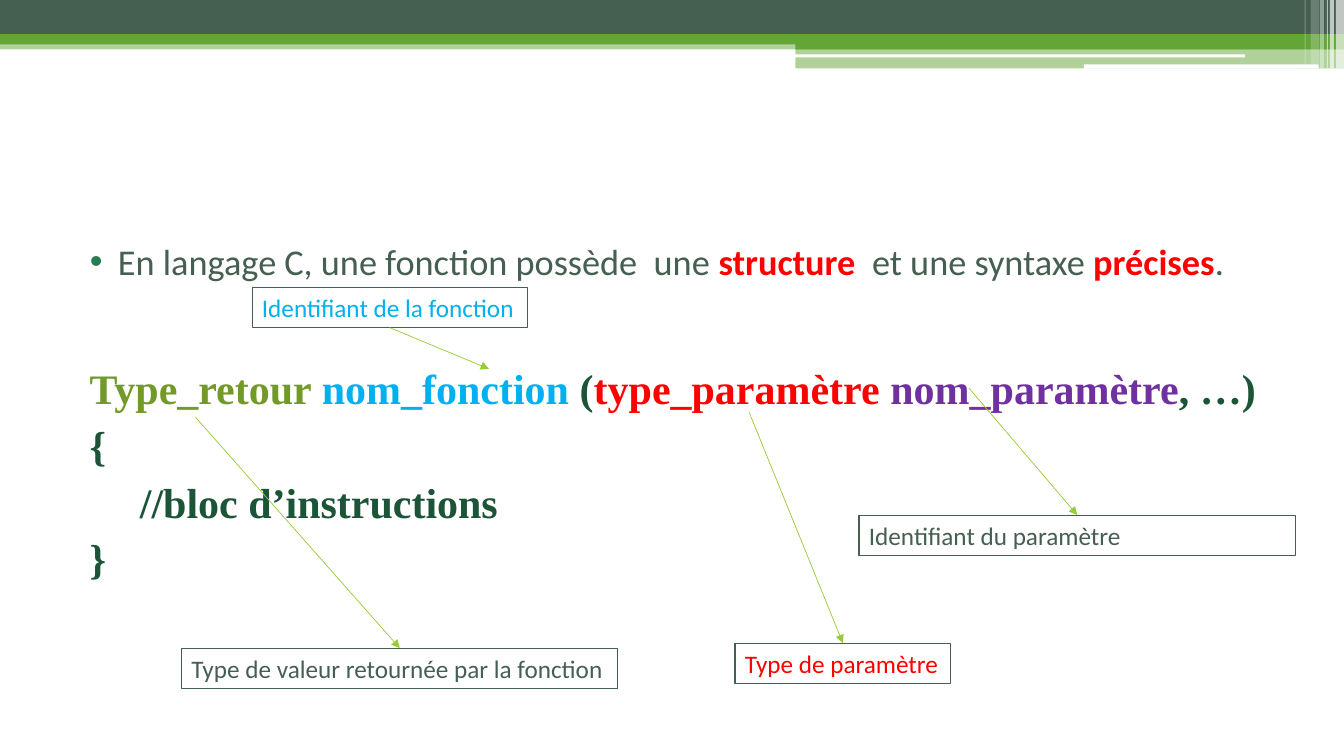
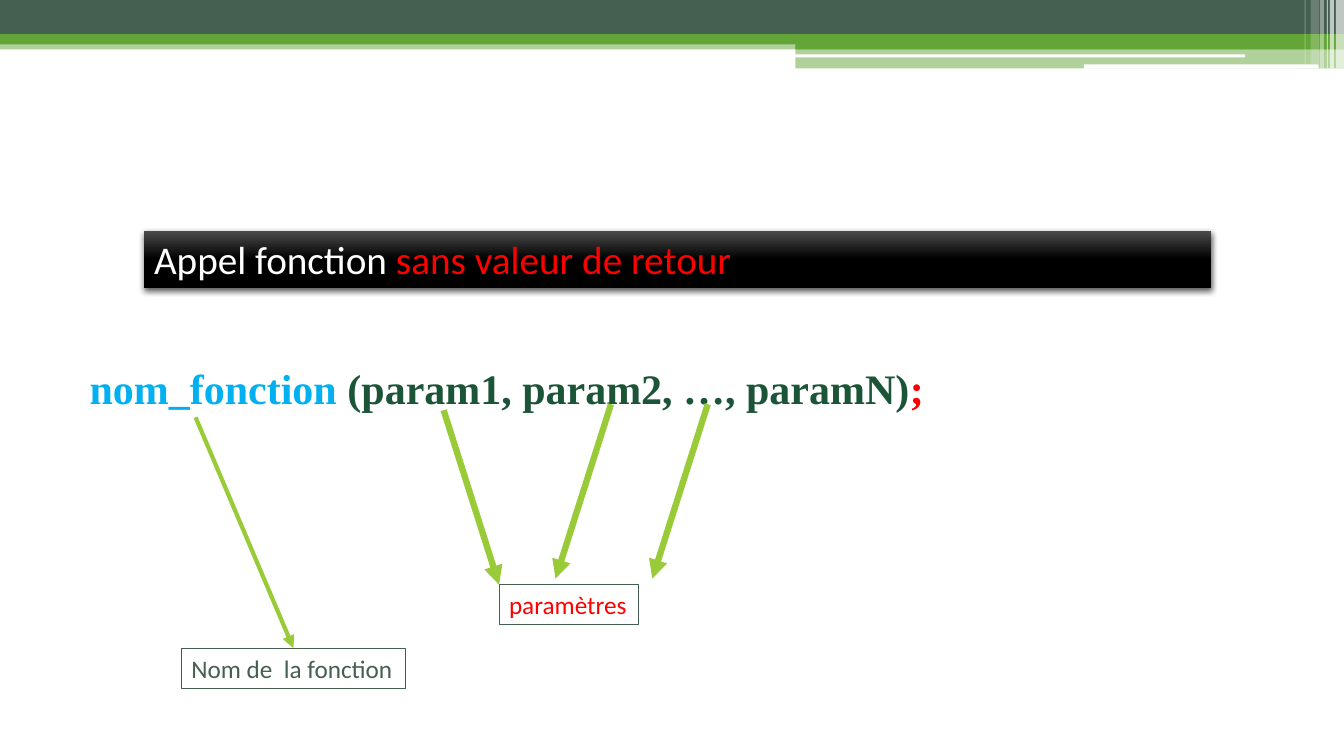
"""Build two slides on the structure and the call of a C function."""
from dataclasses import dataclass

from lxml import etree
from pptx import Presentation
from pptx.dml.color import RGBColor
from pptx.enum.shapes import MSO_CONNECTOR, MSO_SHAPE
from pptx.enum.text import MSO_ANCHOR, MSO_AUTO_SIZE, PP_ALIGN
from pptx.oxml.ns import qn
from pptx.util import Inches, Pt

RECTANGLE, ROUNDED = MSO_SHAPE.RECTANGLE, MSO_SHAPE.ROUNDED_RECTANGLE
STRAIGHT = MSO_CONNECTOR.STRAIGHT
TOP, NO_AUTOFIT = MSO_ANCHOR.TOP, MSO_AUTO_SIZE.NONE
LEFT, JUSTIFY = PP_ALIGN.LEFT, PP_ALIGN.JUSTIFY

SLATE, GREEN, LIME, WHITE, BLACK = "455F51", "63A537", "99CB38", "FFFFFF", "000000"
RED, BLUE, PURPLE, OLIVE, FOREST = "FF0000", "00B0F0", "7030A0", "739A28", "1C5438"
BULLET, CHARCOAL = "297D53", "4B4B4B"
SANS, SERIF = "Calibri", "Times New Roman"
TOP_SIDE, BOTTOM_SIDE = 0, 2


@dataclass(frozen=True)
class Band:
    """A strip of the header, with its opacity in percent."""
    left: float
    top: float
    width: float
    height: float
    color: str
    opacity: int = 100
    rounded: bool = False


@dataclass(frozen=True)
class Span:
    """A stretch of text in one colour."""
    text: str
    color: str
    bold: bool = False


@dataclass(frozen=True)
class Label:
    """A framed caption and the arrow that ties it to the code."""
    text: str
    left: float
    top: float
    width: float
    color: str
    anchor: tuple[float, float] | None = None
    weight: float = 0.5
    outward: bool = False
    wrap: bool = False


BANDS = [
    Band(0, 0.4, 13.33, 0.09, GREEN, 50),
    Band(0, 0, 13.33, 0.34, SLATE),
    Band(0, 0.34, 13.33, 0.1, GREEN),
    Band(7.89, 0.39, 5.44, 0.1, GREEN),
    Band(7.89, 0.48, 5.44, 0.2, GREEN, 50),
    Band(7.88, 0.54, 4.47, 0.03, WHITE, rounded=True),
    Band(10.75, 0.64, 2.33, 0.04, WHITE, rounded=True),
    Band(13.25, 0, 0.08, 0.68, WHITE, 65),
    Band(13.19, 0, 0.04, 0.68, WHITE, 65),
    Band(13.16, 0, 0.01, 0.68, WHITE, 60),
    Band(13.09, 0, 0.04, 0.68, WHITE, 40),
    Band(13, 0, 0.08, 0.64, WHITE, 20),
    Band(12.94, 0, 0.01, 0.64, WHITE, 30),
]

STATEMENT = [[
    Span("En langage C, une fonction possède  une ", SLATE),
    Span("structure", RED, True),
    Span("  et une syntaxe ", SLATE),
    Span("précises", RED, True),
    Span(".", SLATE),
]]
DEFINITION = [
    [Span("Type_retour ", OLIVE, True), Span("nom_fonction", BLUE, True),
     Span(" (", FOREST, True), Span("type_paramètre ", RED, True),
     Span("nom_paramètre", PURPLE, True), Span(", …)", FOREST, True)],
    [Span("{", FOREST, True)],
    [Span("\t//bloc d’instructions", FOREST, True)],
    [Span("}", FOREST, True)],
]
CALL = [[Span("nom_fonction", BLUE, True),
         Span(" (param1, param2, …, paramN)", FOREST, True), Span(";", RED, True)]]
CALL_HEADING = [[Span("Appel fonction ", WHITE), Span("sans valeur de retour", RED)]]

DEFINITION_LABELS = [
    Label("Type de valeur retournée par la fonction", 1.8, 6.43, 4.33, SLATE, (1.94, 4.14)),
    Label("Identifiant de la fonction", 2.5, 2.85, 2.73, BLUE, (4.85, 3.66), outward=True),
    Label("Type de paramètre", 7.29, 6.38, 2.14, RED, (7.43, 4.09)),
    Label("Identifiant du paramètre", 8.52, 5.11, 4.33, SLATE, (9.61, 3.85), wrap=True),
]
CALL_LABELS = [
    Label("Nom de  la fonction", 1.8, 6.43, 2.22, SLATE, (1.94, 4.14), 3),
    Label("paramètres", 4.95, 5.8, 1.38, RED),
]
PARAMETER_ARROWS = [((4.4, 4.07), (4.95, 5.8)), ((6.06, 4.01), (5.51, 5.74)),
                    ((7.02, 4.01), (6.47, 5.74))]


def rgb(color: str) -> RGBColor:
    """Turn a hex string into a colour."""
    return RGBColor.from_string(color)


def add_node(parent, tag: str, **attributes):
    """Append an XML element with the given attributes."""
    return etree.SubElement(parent, qn(tag), attributes)


def write(frame, paragraphs: list[list[Span]], *, size: float, font: str = SANS,
          align=LEFT, gap: float = 0, margin: float = 0, hanging: float = 0,
          bullet: str = "", wrap: bool = True) -> None:
    """Fill a text frame with formatted paragraphs."""
    frame.word_wrap = wrap
    frame.auto_size = NO_AUTOFIT
    frame.vertical_anchor = TOP
    for index, spans in enumerate(paragraphs):
        paragraph = frame.add_paragraph() if index else frame.paragraphs[0]
        paragraph.alignment = align
        paragraph.space_before = Pt(gap if index else 0)
        properties = paragraph._p.get_or_add_pPr()
        properties.set("marL", str(Inches(margin)))
        properties.set("indent", str(Inches(-hanging)))
        if bullet:
            add_node(add_node(properties, "a:buClr"), "a:srgbClr", val=BULLET)
            add_node(properties, "a:buFont", typeface="Arial")
            add_node(properties, "a:buChar", char=bullet)
        for span in spans:
            run = paragraph.add_run()
            run.text = span.text
            run.font.name = font
            run.font.size = Pt(size)
            run.font.bold = span.bold
            run.font.color.rgb = rgb(span.color)


def add_box(slide, left: float, top: float, width: float, height: float):
    """Add a text box measured in inches."""
    return slide.shapes.add_textbox(Inches(left), Inches(top), Inches(width), Inches(height))


def add_bands(master, slide) -> None:
    """Draw the header bands and place them on the master."""
    for index, band in enumerate(BANDS):
        strip = slide.shapes.add_shape(
            ROUNDED if band.rounded else RECTANGLE, Inches(band.left), Inches(band.top),
            Inches(band.width), Inches(band.height))
        strip.shadow.inherit = False
        strip.line.fill.background()
        strip.fill.solid()
        strip.fill.fore_color.rgb = rgb(band.color)
        if band.opacity < 100:
            tone = strip._element.spPr.find(".//" + qn("a:srgbClr"))
            add_node(tone, "a:alpha", val=str(band.opacity * 1000))
        strip._element.nvSpPr.cNvPr.set("id", str(100 + index))
        master.shapes._spTree.insert(2 + index, strip._element)


def add_arrow(slide, start: tuple[float, float], end: tuple[float, float], weight: float):
    """Draw a straight arrow with a triangular head."""
    arrow = slide.shapes.add_connector(STRAIGHT, *(Inches(value) for value in start + end))
    arrow.line.color.rgb = rgb(LIME)
    arrow.line.width = Pt(weight)
    properties = arrow._element.spPr
    add_node(properties.get_or_add_ln(), "a:tailEnd", type="triangle")
    add_node(properties, "a:effectLst")
    return arrow


def add_label(slide, label: Label) -> None:
    """Draw a framed label and its arrow."""
    height = 0.4
    box = add_box(slide, label.left, label.top, label.width, height)
    box.line.color.rgb = rgb(SLATE)
    box.line.width = Pt(0.75)
    write(box.text_frame, [[Span(label.text, label.color)]], size=18, wrap=label.wrap)
    if label.anchor is None:
        return
    middle = label.left + label.width / 2
    if label.outward:
        arrow = add_arrow(slide, (middle, label.top + height), label.anchor, label.weight)
        arrow.begin_connect(box, BOTTOM_SIDE)
    else:
        arrow = add_arrow(slide, label.anchor, (middle, label.top), label.weight)
        arrow.end_connect(box, TOP_SIDE)


def add_code(slide, lines: list[list[Span]], height: float) -> None:
    """Write the lines of code."""
    box = add_box(slide, 0.67, 3.55, 12.33, height)
    write(box.text_frame, lines, size=30, font=SERIF, align=JUSTIFY, gap=4.5, margin=0.12)


def add_heading(slide) -> None:
    """Draw the dark heading bar with its shadow."""
    bar = add_box(slide, 1.43, 2.29, 10.58, 0.57)
    bar.fill.gradient()
    bar.fill.gradient_angle = 270
    for stop, color, position in zip(bar.fill.gradient_stops, (CHARCOAL, BLACK), (0, 0.5)):
        stop.color.rgb = rgb(color)
        stop.position = position
    effects = add_node(bar._element.spPr, "a:effectLst")
    shadow = add_node(effects, "a:outerShdw", blurRad=str(Pt(4.5)), dist=str(Pt(1.5)),
                      dir="5400000", rotWithShape="0")
    add_node(add_node(shadow, "a:srgbClr", val=BLACK), "a:alpha", val="63000")
    write(bar.text_frame, CALL_HEADING, size=28)


def build_definition(slide) -> None:
    """Show the structure of a function."""
    title = slide.shapes.title._element
    title.getparent().remove(title)
    body = slide.placeholders[1]
    body.left, body.top = Inches(0.67), Inches(2.32)
    body.width, body.height = Inches(12), Inches(0.65)
    write(body.text_frame, STATEMENT, size=25.9, margin=0.4, hanging=0.28, bullet="•")
    add_code(slide, DEFINITION, 2.3)
    for label in DEFINITION_LABELS:
        add_label(slide, label)


def build_call(slide) -> None:
    """Show the call of a function without a return value."""
    add_heading(slide)
    add_code(slide, CALL, 0.68)
    for label in CALL_LABELS:
        add_label(slide, label)
    for start, end in PARAMETER_ARROWS:
        add_arrow(slide, start, end, 4.5)


def main() -> None:
    """Build and save the presentation."""
    deck = Presentation()
    deck.slide_width, deck.slide_height = Inches(13.33), Inches(7.5)
    content, blank = deck.slide_layouts[1], deck.slide_layouts[6]
    definition = deck.slides.add_slide(content)
    add_bands(deck.slide_master, definition)
    build_definition(definition)
    build_call(deck.slides.add_slide(blank))
    deck.save("out.pptx")


if __name__ == "__main__":
    main()
